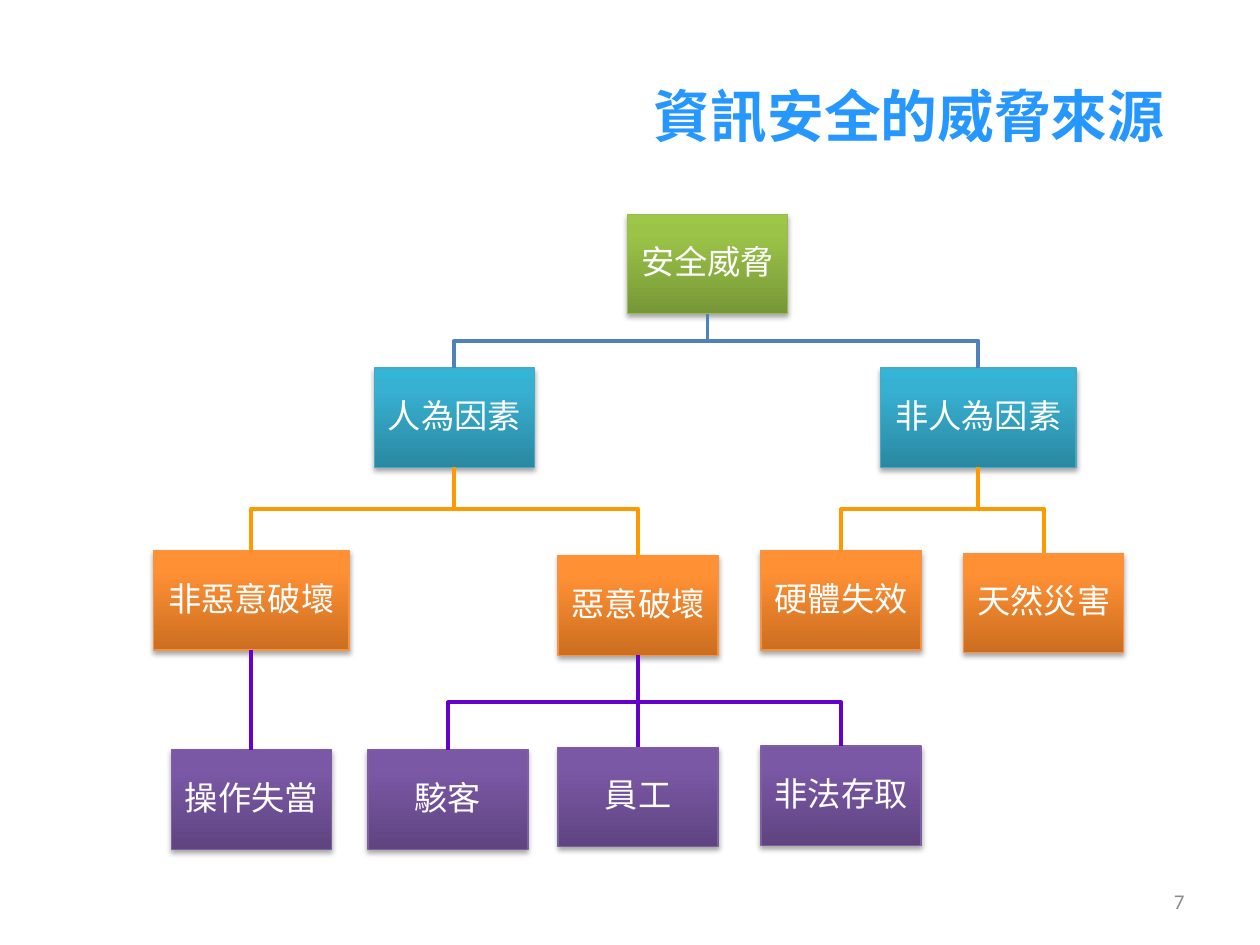
from lxml import etree
from pptx import Presentation
from pptx.dml.color import RGBColor
from pptx.enum.shapes import MSO_CONNECTOR as Link, MSO_SHAPE as Shape
from pptx.enum.text import MSO_ANCHOR as Anchor, MSO_AUTO_SIZE as AutoSize, PP_ALIGN as Align
from pptx.oxml import parse_xml
from pptx.oxml.ns import nsdecls, qn
from pptx.util import Inches, Pt

CJK = "Noto Sans CJK SC"
BOX_HEIGHT, NARROW, WIDE = 0.79, 1.27, 1.55

# Each level: gradient from bottom to top, then outline
GREEN = ("779737", "9BC348", "9DC746", "98B955")
TEAL = ("2A88A2", "37B1D2", "34B4D6", "46AAC5")
ORANGE = ("CC6E20", "FF9034", "FF9136", "F69240")
PURPLE = ("5F4480", "7B58A6", "7C57A8", "7D60A0")

# Text, left, top, width, level colours
THREATS = [
    ("安全威脅", 4.98, 1.7, NARROW, GREEN),
    ("人為因素", 2.97, 2.92, NARROW, TEAL),
    ("非人為因素", 6.99, 2.92, WIDE, TEAL),
    ("非惡意破壞", 1.22, 4.37, WIDE, ORANGE),
    ("惡意破壞", 4.43, 4.41, NARROW, ORANGE),
    ("硬體失效", 6.04, 4.37, NARROW, ORANGE),
    ("天然災害", 7.65, 4.39, NARROW, ORANGE),
    ("操作失當", 1.36, 5.95, NARROW, PURPLE),
    ("駭客", 2.92, 5.95, NARROW, PURPLE),
    ("員工", 4.43, 5.93, NARROW, PURPLE),
    ("非法存取", 6.04, 5.92, NARROW, PURPLE),
]

# Parent, children, line colour
BRANCHES = [
    ("安全威脅", ["人為因素", "非人為因素"], "4F81BD"),
    ("人為因素", ["非惡意破壞", "惡意破壞"], "FF9900"),
    ("非人為因素", ["硬體失效", "天然災害"], "FF9900"),
    ("非惡意破壞", ["操作失當"], "6600CC"),
    ("惡意破壞", ["駭客", "員工", "非法存取"], "6600CC"),
]


def rgb(value):
    return RGBColor.from_string(value)


def write(frame, text, size, color, font=CJK, align=Align.CENTER, bold=False):
    """Put one formatted paragraph in a text frame and return it."""
    frame.word_wrap = True
    frame.auto_size = AutoSize.NONE
    frame.vertical_anchor = Anchor.MIDDLE
    line = frame.paragraphs[0]
    line.alignment = align
    run = line.add_run()
    run.text = text
    run.font.size, run.font.bold, run.font.name = Pt(size), bold, font
    run.font.color.rgb = rgb(color)
    etree.SubElement(run.font._element, qn("a:ea"), typeface=font)
    return line


def add_threat(slide, text, left, top, width, colors):
    """Draw one box with its level gradient and a soft shadow."""
    box = slide.shapes.add_shape(
        Shape.RECTANGLE, Inches(left), Inches(top), Inches(width), Inches(BOX_HEIGHT))
    *gradient, outline = colors
    stops = "".join(
        f'<a:gs pos="{place}000"><a:srgbClr val="{color}"/></a:gs>'
        for place, color in zip((0, 80, 100), gradient))
    properties = box._element.spPr
    properties.append(parse_xml(
        f'<a:gradFill {nsdecls("a")} rotWithShape="1"><a:gsLst>{stops}</a:gsLst>'
        '<a:lin ang="16200000" scaled="0"/></a:gradFill>'))
    box.line.color.rgb = rgb(outline)
    box.line.width = Pt(0.75)
    properties.append(parse_xml(
        f'<a:effectLst {nsdecls("a")}><a:outerShdw blurRad="{Pt(3.1)}" dist="{Pt(1.8)}" '
        'dir="5400000" rotWithShape="0"><a:srgbClr val="000000"><a:alpha val="35000"/>'
        '</a:srgbClr></a:outerShdw></a:effectLst>'))

    frame = box.text_frame
    frame.margin_left = frame.margin_right = Inches(0.08)
    frame.margin_top = frame.margin_bottom = Inches(0.08)
    label = write(frame, text, 19, "FFFFFF")
    label.line_spacing = 0.9
    after = etree.SubElement(label._p.get_or_add_pPr(), qn("a:spcAft"))
    etree.SubElement(after, qn("a:spcPct"), val="35000")
    return box


def add_branch(slide, parent, child, color, bus):
    """Join parent bottom to child top, turning at the height of the bus."""
    start_x, start_y = parent.left + parent.width // 2, parent.top + parent.height
    end_x, end_y = child.left + child.width // 2, child.top
    across, down = abs(end_x - start_x), end_y - start_y
    straight = across < Inches(0.02)
    branch = slide.shapes.add_connector(
        Link.STRAIGHT if straight else Link.ELBOW, start_x, start_y, end_x, end_y)
    branch.begin_connect(parent, 2)
    branch.end_connect(child, 0)
    branch.line.color.rgb = rgb(color)
    branch.line.width = Pt(2.25)
    properties = branch._element.spPr
    etree.SubElement(properties, qn("a:effectLst"))
    if straight:
        return

    # A vertical-first elbow is a turned horizontal-first one
    branch.left = (start_x + end_x - down) // 2
    branch.top = (start_y + end_y - across) // 2
    branch.width, branch.height = down, across
    frame = properties.find(qn("a:xfrm"))
    for flip in ("flipH", "flipV"):
        frame.attrib.pop(flip, None)
    if end_x < start_x:
        frame.set("rot", "5400000")
    else:
        frame.set("rot", "16200000")
        frame.set("flipH", "1")
    guides = properties.find(qn("a:prstGeom")).find(qn("a:avLst"))
    turn = round((bus - start_y) / down * 100000)
    etree.SubElement(guides, qn("a:gd"), name="adj1", fmla=f"val {turn}")


def add_title(slide, text):
    title = slide.shapes.title
    title.left, title.top = Inches(0.66), Inches(0.58)
    title.width, title.height = Inches(8.68), Inches(0.67)
    write(title.text_frame, text, 32.4, "2597FF", align=Align.RIGHT, bold=True)


def add_page_number(slide, number):
    page = slide.shapes.add_textbox(Inches(7.17), Inches(6.95), Inches(2.33), Inches(0.4))
    write(page.text_frame, number, 12, "8C8C8C", font="Calibri", align=Align.RIGHT)


def main():
    deck = Presentation()
    deck.slide_width, deck.slide_height = Inches(10), Inches(7.5)
    slide = deck.slides.add_slide(deck.slide_layouts[5])
    add_title(slide, "資訊安全的威脅來源")
    add_page_number(slide, "7")

    # Threat tree
    boxes = {threat[0]: add_threat(slide, *threat) for threat in THREATS}
    for source, results, color in BRANCHES:
        parent = boxes[source]
        bus = (parent.top + parent.height + boxes[results[0]].top) // 2
        for result in results:
            add_branch(slide, parent, boxes[result], color, bus)

    deck.save("out.pptx")


if __name__ == "__main__":
    main()
